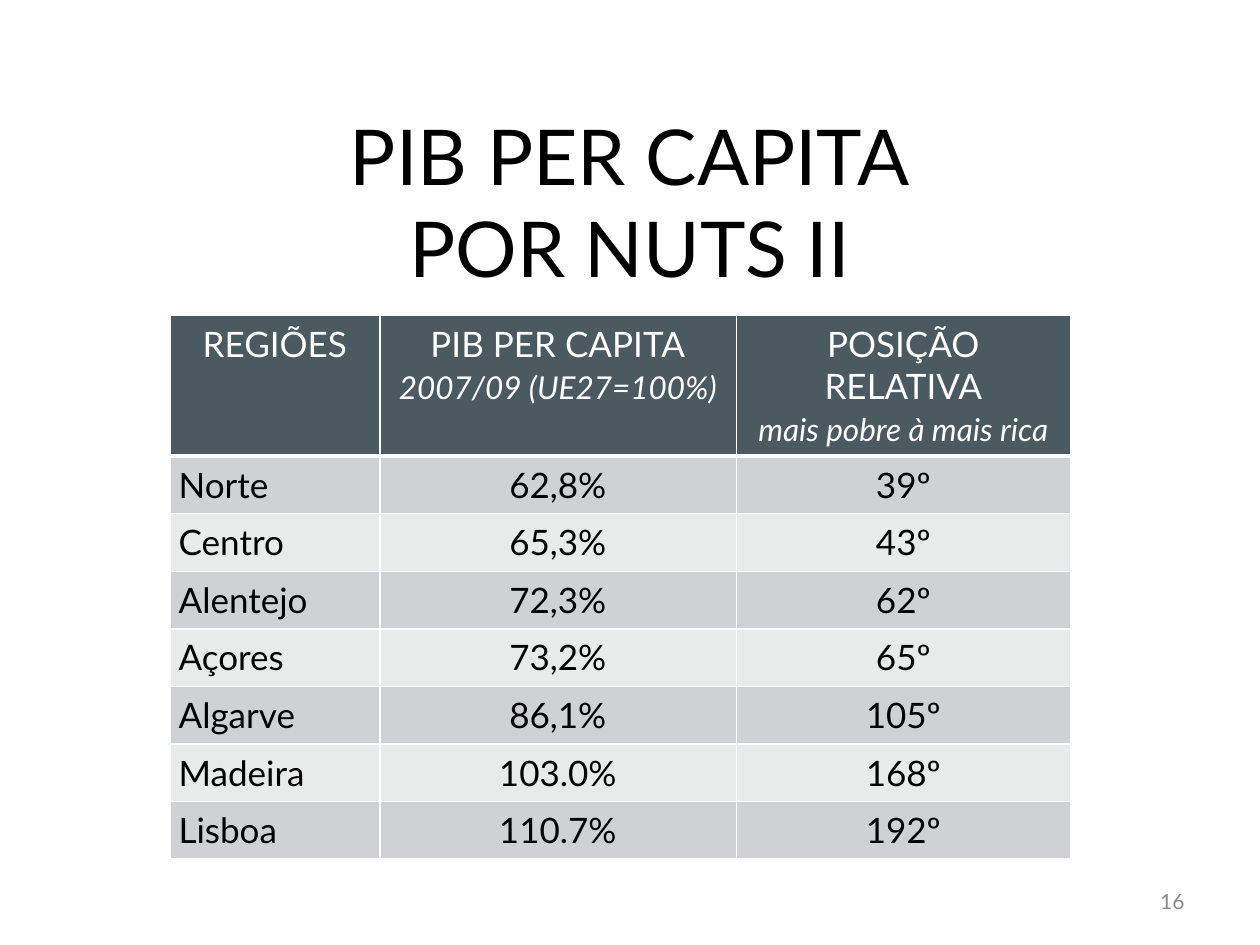
from dataclasses import dataclass

from lxml.etree import SubElement
from pptx import Presentation
from pptx.dml.color import RGBColor
from pptx.enum.text import MSO_ANCHOR, PP_ALIGN
from pptx.oxml.ns import qn
from pptx.util import Cm, Pt


@dataclass(frozen=True)
class Theme:
    font: str = "Lato"
    black: str = "000000"
    white: str = "FFFFFF"
    header: str = "4B5A60"
    bands: tuple = ("D0D1D2", "E9EAEA")
    muted: str = "898989"
    title_size: int = 44
    table_size: int = 20
    note_size: int = 18
    number_size: int = 12
    thin_line: int = 1
    thick_line: int = 3


class SlideBuilder:
    def __init__(self, presentation, theme):
        self.theme = theme
        self.slide = presentation.slides.add_slide(presentation.slide_layouts[5])

    def add_run(self, paragraph, text, size, color, italic=False):
        run = paragraph.add_run()
        run.text = text
        run.font.name = self.theme.font
        run.font.size = Pt(size)
        run.font.bold = False
        run.font.italic = italic
        run.font.color.rgb = RGBColor.from_string(color)

    def add_title(self, lines, left, top, width, height):
        title = self.slide.shapes.title
        title.left, title.top, title.width, title.height = map(Cm, (left, top, width, height))
        title.text_frame.vertical_anchor = MSO_ANCHOR.MIDDLE
        paragraph = title.text_frame.paragraphs[0]
        paragraph.alignment = PP_ALIGN.CENTER
        for index, line in enumerate(lines):
            if index:
                paragraph.add_line_break()
            self.add_run(paragraph, line, self.theme.title_size, self.theme.black)

    def add_slide_number(self, text, left, top, width, height):
        shape = self.slide.shapes.add_textbox(*map(Cm, (left, top, width, height)))
        frame = shape.text_frame
        frame.word_wrap = True
        frame.vertical_anchor = MSO_ANCHOR.MIDDLE
        paragraph = frame.paragraphs[0]
        paragraph.alignment = PP_ALIGN.RIGHT
        self.add_run(paragraph, text, self.theme.number_size, self.theme.muted)

    def set_borders(self, cell, top, bottom):
        properties = cell._tc.get_or_add_tcPr()
        thin = self.theme.thin_line
        widths = {"a:lnL": thin, "a:lnR": thin, "a:lnT": top, "a:lnB": bottom}
        for tag, width in widths.items():
            line = SubElement(properties, qn(tag), w=str(Pt(width)))
            fill = SubElement(line, qn("a:solidFill"))
            SubElement(fill, qn("a:srgbClr"), val=self.theme.white)

    def fill_cell(self, cell, lines, fill, color, alignment, top, bottom):
        # Borders come before the fill in the cell properties
        self.set_borders(cell, top, bottom)
        cell.fill.solid()
        cell.fill.fore_color.rgb = RGBColor.from_string(fill)
        cell.margin_left, cell.margin_right = Cm(0.16), Cm(0.18)
        cell.margin_top = cell.margin_bottom = Cm(0.15)
        for index, line in enumerate(lines):
            frame = cell.text_frame
            paragraph = frame.add_paragraph() if index else frame.paragraphs[0]
            paragraph.alignment = alignment
            if index:
                paragraph.space_before = Pt(2)
            size = self.theme.note_size if index else self.theme.table_size
            self.add_run(paragraph, line, size, color, italic=index > 0)

    def add_table(self, headings, records, left, top, widths, header_height, row_height):
        theme = self.theme
        height = header_height + row_height * len(records)
        frame = self.slide.shapes.add_table(
            len(records) + 1, len(widths), Cm(left), Cm(top), Cm(sum(widths)), Cm(height))
        table = frame.table
        for column, width in zip(table.columns, widths):
            column.width = Cm(width)
        for row in table.rows:
            row.height = Cm(row_height)
        table.rows[0].height = Cm(header_height)

        # Header row
        for column, lines in enumerate(headings):
            self.fill_cell(table.cell(0, column), lines, theme.header, theme.white,
                           PP_ALIGN.CENTER, theme.thin_line, theme.thick_line)

        # Banded body rows
        for row, record in enumerate(records, start=1):
            top_line = theme.thick_line if row == 1 else theme.thin_line
            for column, text in enumerate(record):
                alignment = PP_ALIGN.CENTER if column else PP_ALIGN.LEFT
                self.fill_cell(table.cell(row, column), [text], theme.bands[(row - 1) % 2],
                               theme.black, alignment, top_line, theme.thin_line)


HEADINGS = [
    ["REGIÕES"],
    ["PIB PER CAPITA", "2007/09 (UE27=100%)"],
    ["POSIÇÃO RELATIVA", "mais pobre à mais rica"],
]
REGIONS = [
    ("Norte", "62,8%", "39º"),
    ("Centro", "65,3%", "43º"),
    ("Alentejo", "72,3%", "62º"),
    ("Açores", "73,2%", "65º"),
    ("Algarve", "86,1%", "105º"),
    ("Madeira", "103.0%", "168º"),
    ("Lisboa", "110.7%", "192º"),
]


def main():
    presentation = Presentation()
    presentation.slide_width, presentation.slide_height = Cm(25.4), Cm(19.05)
    builder = SlideBuilder(presentation, Theme())
    builder.add_title(["PIB PER CAPITA", "POR NUTS II"], 1.27, 1.73, 22.86, 4.62)
    builder.add_table(HEADINGS, REGIONS, left=3.44, top=6.36, widths=(4.22, 7.19, 6.74),
                      header_height=2.06, row_height=1.16)
    builder.add_slide_number("16", 18.2, 17.66, 5.93, 1.01)
    presentation.save("out.pptx")


if __name__ == "__main__":
    main()
